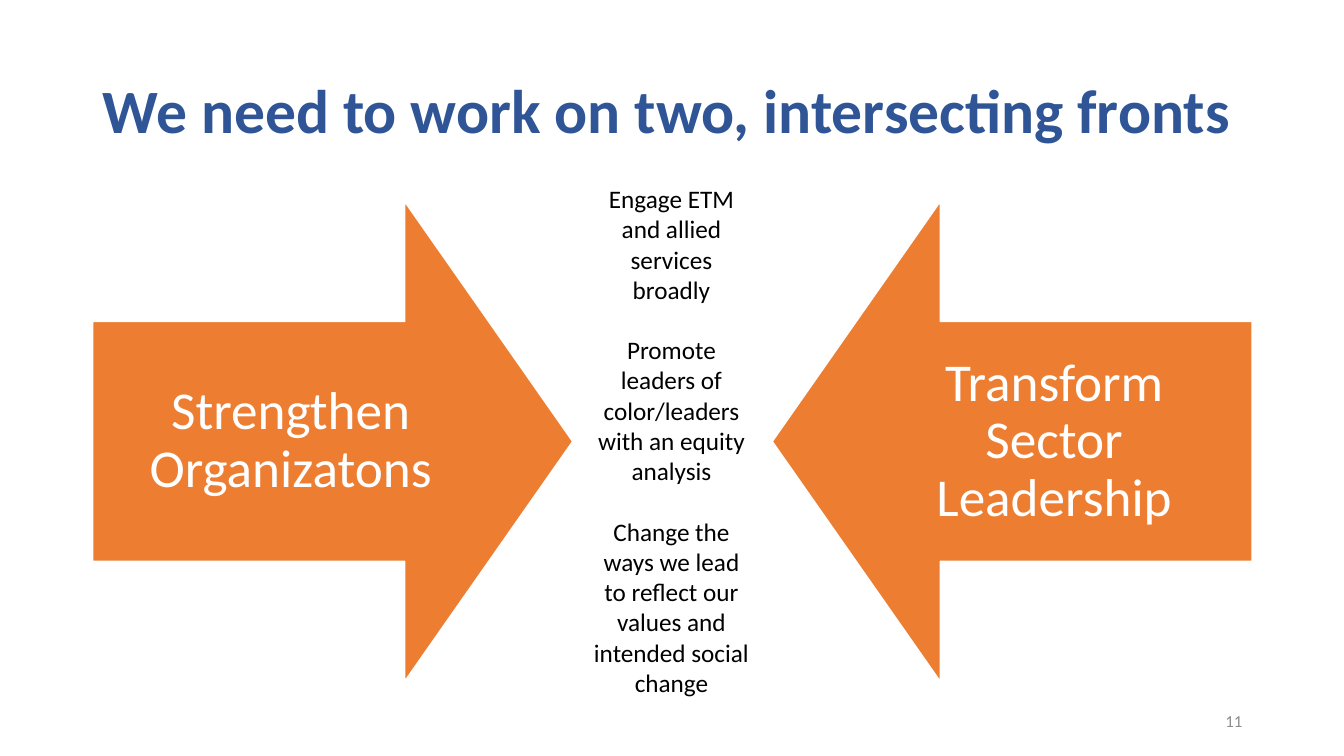
from pptx import Presentation
from pptx.dml.color import RGBColor
from pptx.enum.shapes import MSO_SHAPE
from pptx.enum.text import MSO_ANCHOR, PP_ALIGN
from pptx.util import Inches, Pt

BLUE = RGBColor(0x2F, 0x55, 0x97)
ORANGE = RGBColor(0xED, 0x7D, 0x31)
WHITE = RGBColor(0xFF, 0xFF, 0xFF)
BLACK = RGBColor(0, 0, 0)
GRAY = RGBColor(0x8C, 0x8C, 0x8C)
LEFT, CENTER, RIGHT = PP_ALIGN.LEFT, PP_ALIGN.CENTER, PP_ALIGN.RIGHT
TOP, MIDDLE = MSO_ANCHOR.TOP, MSO_ANCHOR.MIDDLE
RIGHT_ARROW, LEFT_ARROW = MSO_SHAPE.RIGHT_ARROW, MSO_SHAPE.LEFT_ARROW

MARGIN = 0.92
CONTENT_W = 11.5
ARROW_SIZE = 4.76
FRONTS_TOP = 2
ACTIONS = [
    "Engage ETM and allied services broadly",
    "Promote leaders of color/leaders with an equity analysis",
    "Change the ways we lead to reflect our values and intended social change",
]


def write(tf, texts, size, color, align, anchor=MIDDLE, bold=False, spacing=1.0, gap=0):
    tf.word_wrap = True
    tf.vertical_anchor = anchor
    for i, text in enumerate(texts):
        p = tf.paragraphs[0] if i == 0 else tf.add_paragraph()
        p.text = text
        p.alignment = align
        p.line_spacing = spacing
        p.space_before = Pt(gap if i else 0)
        p.font.name = "Calibri"
        p.font.size = Pt(size)
        p.font.bold = bold
        p.font.color.rgb = color


def add_text(s, box, texts, size, color, align, **style):
    sp = s.shapes.add_textbox(*map(Inches, box))
    write(sp.text_frame, texts, size, color, align, **style)


def add_front(s, x, y, kind, label):
    size = Inches(ARROW_SIZE)
    sp = s.shapes.add_shape(kind, Inches(x), Inches(y), size, size)
    sp.adjustments[0] = 0.5
    sp.adjustments[1] = 0.35
    sp.shadow.inherit = False
    sp.fill.solid()
    sp.fill.fore_color.rgb = ORANGE
    sp.line.color.rgb = WHITE
    sp.line.width = Pt(1)
    tf = sp.text_frame
    tf.margin_left = tf.margin_right = tf.margin_top = tf.margin_bottom = Inches(0.3)
    write(tf, [label], 38, WHITE, CENTER, spacing=0.9)


def add_fronts(s, x, y, width):
    add_front(s, x, y, RIGHT_ARROW, "Strengthen Organizatons")
    add_front(s, x + width - ARROW_SIZE, y, LEFT_ARROW, "Transform Sector Leadership")


def main():
    prs = Presentation()
    prs.slide_width = Inches(13.33)
    prs.slide_height = Inches(7.5)
    s = prs.slides.add_slide(prs.slide_layouts[6])
    add_text(s, (MARGIN, 0.4, CONTENT_W, 1.45),
             ["We need to work on two, intersecting fronts"],
             44, BLUE, LEFT, bold=True, spacing=0.9)
    add_fronts(s, MARGIN, FRONTS_TOP, CONTENT_W)
    add_text(s, (5.78, 1.77, 1.76, 5.3), ACTIONS, 18, BLACK, CENTER, anchor=TOP, gap=21.6)
    add_text(s, (9.42, 6.95, 3, 0.4), ["11"], 12, GRAY, RIGHT)
    prs.save("out.pptx")


if __name__ == "__main__":
    main()
